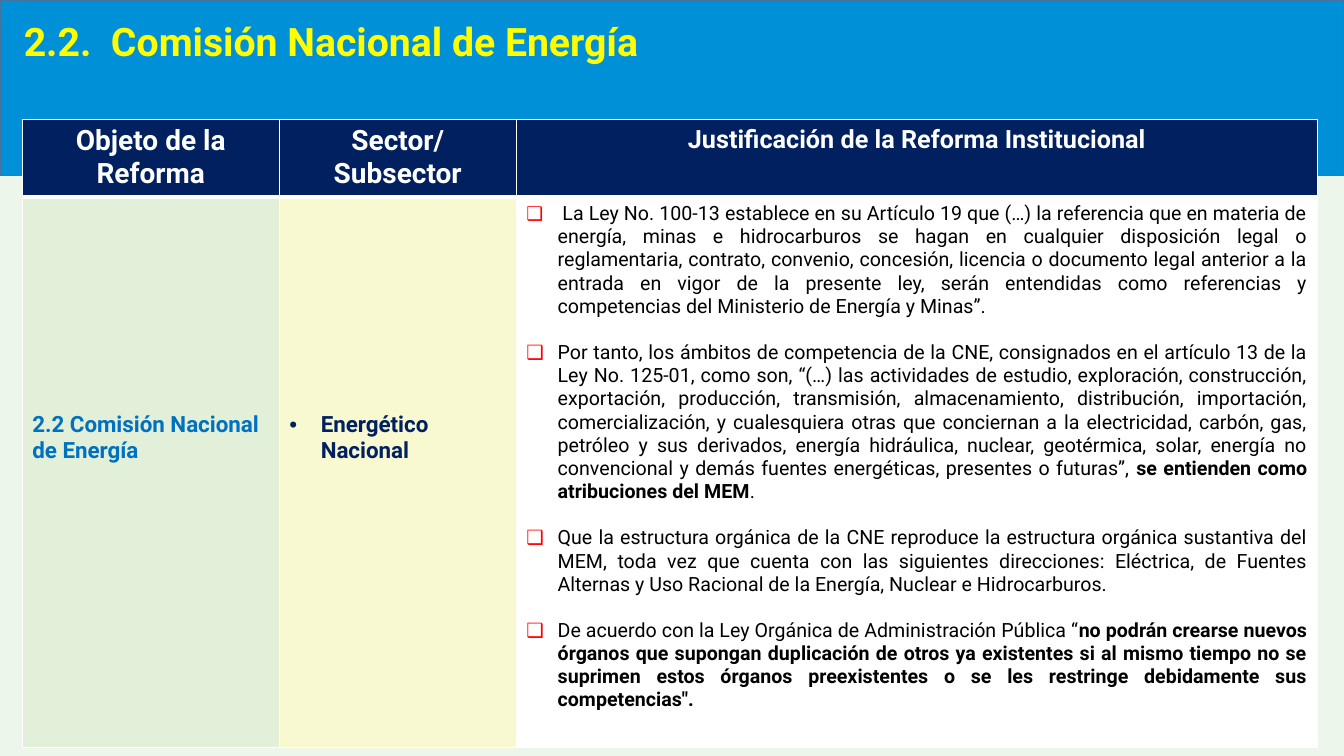
from lxml.etree import SubElement
from pptx import Presentation
from pptx.dml.color import RGBColor
from pptx.enum.shapes import MSO_SHAPE
from pptx.enum.text import PP_ALIGN
from pptx.oxml.ns import qn
from pptx.util import Cm, Pt

FONT = "Roboto"
PALE = RGBColor(0xEC, 0xF6, 0xEB)
BLUE = RGBColor(0x00, 0x90, 0xD7)
EDGE = RGBColor(0x43, 0x73, 0x9E)
YELLOW = RGBColor(0xFF, 0xFF, 0x00)
NAVY = RGBColor(0x00, 0x20, 0x60)
SKY = RGBColor(0x00, 0x70, 0xC0)
GREEN = RGBColor(0xE2, 0xF0, 0xD9)
CREAM = RGBColor(0xF8, 0xF9, 0xD1)
RED = RGBColor(0xFF, 0x00, 0x00)
WHITE = RGBColor(0xFF, 0xFF, 0xFF)
BLACK = RGBColor(0x00, 0x00, 0x00)

WIDTH, HEIGHT = 33.87, 19.05
COLS = (6.48, 5.97, 20.19)
ROWS = (1.94, 13.86)
HEADS = (("Objeto de la Reforma", 20), ("Sector/Subsector", 20),
         ("Justificación de la Reforma Institucional", 18))
DROP = 5.42  # top margin of the two short cells

# Each reason is a list of runs: text, bold
REASONS = (
    [("La Ley No. 100-13 establece en su Artículo 19 que (…) la referencia "
      "que en materia de energía, minas e hidrocarburos se hagan en cualquier "
      "disposición legal o reglamentaria, contrato, convenio, concesión, "
      "licencia o documento legal anterior a la entrada en vigor de la "
      "presente ley, serán entendidas como referencias y competencias del "
      "Ministerio de Energía y Minas”. ", False)],
    [("Por tanto, los ámbitos de competencia de la CNE, consignados en el "
      "artículo 13 de la Ley No. 125-01, como son, “(…) las actividades de "
      "estudio, exploración, construcción, exportación, producción, "
      "transmisión, almacenamiento, distribución, importación, "
      "comercialización, y cualesquiera otras que conciernan a la "
      "electricidad, carbón, gas, petróleo y sus derivados, energía "
      "hidráulica, nuclear, geotérmica, solar, energía no convencional y "
      "demás fuentes energéticas, presentes o futuras”, ", False),
     ("se entienden como atribuciones del MEM", True),
     (".", False)],
    [("Que la estructura orgánica de la CNE reproduce la estructura orgánica "
      "sustantiva del MEM, toda vez que cuenta con las siguientes "
      "direcciones: Eléctrica, de Fuentes Alternas y Uso Racional de la "
      "Energía, Nuclear e Hidrocarburos.", False)],
    [("De acuerdo con la Ley Orgánica de Administración Pública “", False),
     ("no podrán crearse nuevos órganos que supongan duplicación de otros ya "
      "existentes si al mismo tiempo no se suprimen estos órganos "
      "preexistentes o se les restringe debidamente sus competencias\".",
      True)],
)


def add_run(para, text, size, color, bold=True):
    run = para.add_run()
    run.text = text
    font = run.font
    font.name, font.size, font.bold = FONT, Pt(size), bold
    font.color.rgb = color
    return run


def add_bullet(para, char, color=None):
    props = para._p.get_or_add_pPr()
    props.set("marL", str(Cm(0.79)))
    props.set("indent", str(Cm(-0.79)))
    if color is not None:
        tint = SubElement(props, qn("a:buClr"))
        SubElement(tint, qn("a:srgbClr"), val=str(color))
    SubElement(props, qn("a:buFont"), typeface="Arial")
    SubElement(props, qn("a:buChar"), char=char)


def style_cell(cell, fill, top, bottom):
    """Set white borders, then the fill; top and bottom are line widths."""
    props = cell._tc.get_or_add_tcPr()
    for side, width in zip("LRTB", (1, 1, top, bottom)):
        line = SubElement(props, qn("a:ln" + side), w=str(Pt(width)))
        paint = SubElement(line, qn("a:solidFill"))
        SubElement(paint, qn("a:srgbClr"), val=str(WHITE))
    cell.fill.solid()
    cell.fill.fore_color.rgb = fill


def draw_banner(slide, left, top, width, height):
    band = slide.shapes.add_shape(MSO_SHAPE.RECTANGLE, Cm(left), Cm(top),
                                  Cm(width), Cm(height))
    band.shadow.inherit = False
    band.fill.solid()
    band.fill.fore_color.rgb = BLUE
    band.line.color.rgb = EDGE
    band.line.width = Pt(1)
    title = slide.shapes.add_textbox(Cm(left + 0.35), Cm(top + 0.3),
                                     Cm(30.56), Cm(1.45))
    title.text_frame.word_wrap = True
    add_run(title.text_frame.paragraphs[0],
            "2.2.  Comisión Nacional de Energía", 28, YELLOW)


def fill_reasons(cell):
    frame = cell.text_frame
    for index, runs in enumerate(REASONS):
        para = frame.add_paragraph() if index else frame.paragraphs[0]
        para.alignment = PP_ALIGN.JUSTIFY
        add_bullet(para, "❑", RED)
        if index:
            para.space_before = Pt(16.5)
        else:
            add_run(para, " ", 13.5, BLACK, False).font.italic = True
        for text, bold in runs:
            add_run(para, text, 14, BLACK, bold)


def draw_table(slide, left, top):
    frame = slide.shapes.add_table(len(ROWS), len(COLS), Cm(left), Cm(top),
                                   Cm(sum(COLS)), Cm(sum(ROWS)))
    table = frame.table
    for col, width in zip(table.columns, COLS):
        col.width = Cm(width)
    for row, height in zip(table.rows, ROWS):
        row.height = Cm(height)
    for index, (text, size) in enumerate(HEADS):
        cell = table.cell(0, index)
        style_cell(cell, NAVY, 1, 3)
        para = cell.text_frame.paragraphs[0]
        para.alignment = PP_ALIGN.CENTER
        add_run(para, text, size, WHITE)

    body = [table.cell(1, index) for index in range(len(COLS))]
    for cell, fill in zip(body, (GREEN, CREAM, WHITE)):
        style_cell(cell, fill, 3, 1)
    target, sector, reasons = body
    target.margin_top = sector.margin_top = Cm(DROP)
    add_run(target.text_frame.paragraphs[0],
            "2.2 Comisión Nacional de Energía", 16, SKY)
    para = sector.text_frame.paragraphs[0]
    add_bullet(para, "•")
    add_run(para, "Energético Nacional", 16, NAVY)
    fill_reasons(reasons)


def main():
    deck = Presentation()
    deck.slide_width, deck.slide_height = Cm(WIDTH), Cm(HEIGHT)
    slide = deck.slides.add_slide(deck.slide_layouts[6])
    slide.background.fill.solid()
    slide.background.fill.fore_color.rgb = PALE
    draw_banner(slide, 0, 0, WIDTH, 4.42)
    draw_table(slide, 0.56, 3.02)
    deck.save("out.pptx")


if __name__ == "__main__":
    main()
